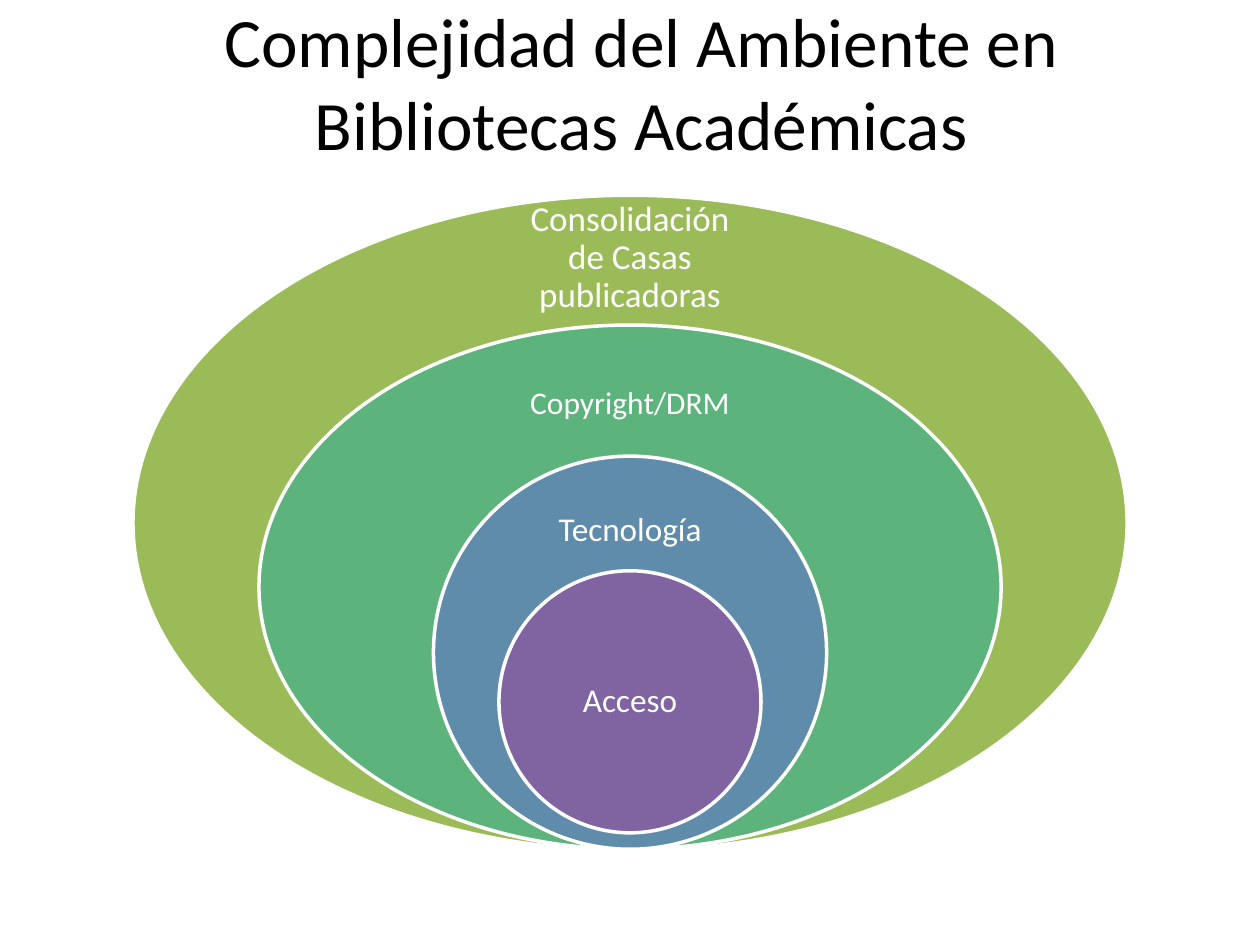
"""Builds the slide of nested ellipses on the environment of academic libraries."""
from pptx import Presentation
from pptx.dml.color import RGBColor
from pptx.enum.shapes import MSO_SHAPE
from pptx.enum.text import MSO_ANCHOR, PP_ALIGN
from pptx.util import Inches, Pt

COLORS = {
    "title": "000000",
    "white": "FFFFFF",
    "publishers": "9BBB59",
    "copyright": "5CB37C",
    "technology": "608CAB",
    "access": "8064A2",
}

deck = Presentation()
deck.slide_width, deck.slide_height = Inches(10), Inches(7.5)
slide = deck.slides.add_slide(deck.slide_layouts[6])


def add_label(wording, left, top, width, height, size, color, inset=None, spacing=None):
    label = slide.shapes.add_textbox(Inches(left), Inches(top), Inches(width), Inches(height))
    frame = label.text_frame
    frame.word_wrap = True
    frame.vertical_anchor = MSO_ANCHOR.MIDDLE
    if inset is not None:
        frame.margin_left = frame.margin_right = Inches(inset)
        frame.margin_top = frame.margin_bottom = Inches(inset)
    paragraph = frame.paragraphs[0]
    paragraph.alignment = PP_ALIGN.CENTER
    paragraph.line_spacing = spacing
    run = paragraph.add_run()
    run.text = wording
    run.font.name = "Calibri"
    run.font.size = Pt(size)
    run.font.color.rgb = RGBColor.from_string(COLORS[color])


add_label("Complejidad del Ambiente en Bibliotecas Académicas",
          0.59, 0.02, 9, 1.25, 39.6, "title")

center = 5
layers = [
    ("Consolidación de Casas publicadoras", "publishers", 7.89, 5.2, 6.75, 1.66, 2.21, 0.78, 20, 0.16),
    ("Copyright/DRM", "copyright", 5.89, 4.16, 6.74, 2.83, 2.06, 0.75, 18, 0.14),
    ("Tecnología", "technology", 3.12, 3.12, 6.74, 3.86, 1.45, 0.7, 19, 0.15),
    ("Acceso", "access", 2.08, 2.08, 6.61, 5.05, 1.47, 1.04, 19, 0.15),
]

for wording, color, width, height, bottom, label_top, label_width, label_height, size, inset in layers:
    ellipse = slide.shapes.add_shape(
        MSO_SHAPE.OVAL, Inches(center - width / 2), Inches(bottom - height),
        Inches(width), Inches(height))
    ellipse.shadow.inherit = False
    ellipse.fill.solid()
    ellipse.fill.fore_color.rgb = RGBColor.from_string(COLORS[color])
    ellipse.line.color.rgb = RGBColor.from_string(COLORS["white"])
    ellipse.line.width = Pt(2)
    add_label(wording, center - label_width / 2, label_top, label_width, label_height,
              size, "white", inset, 0.9)

deck.save("out.pptx")
